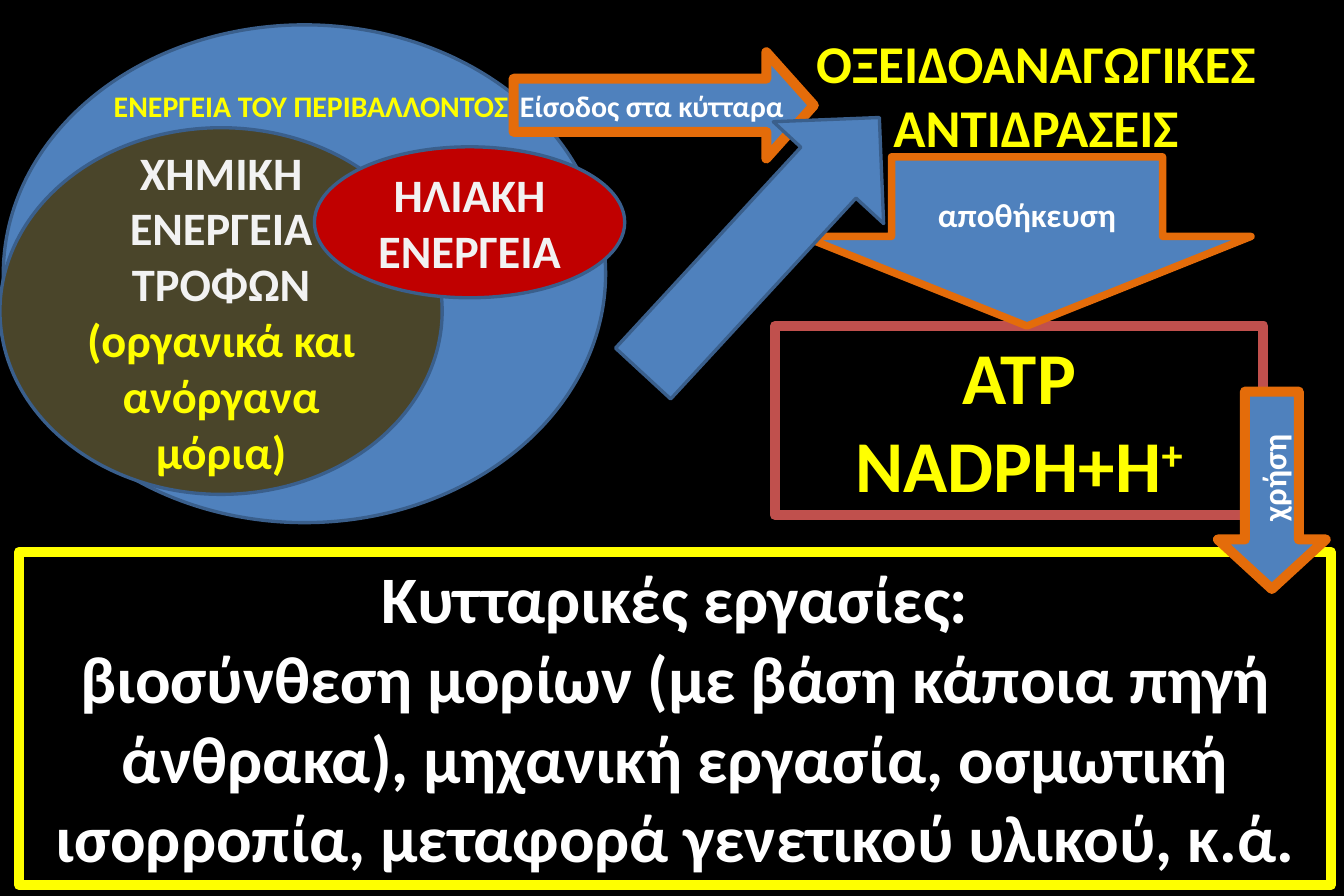
"""Build the slide on how cells take in, store and use energy."""
from pptx import Presentation
from pptx.dml.color import RGBColor
from pptx.enum.shapes import MSO_SHAPE as Preset
from pptx.enum.text import MSO_ANCHOR as Anchor, MSO_AUTO_SIZE as AutoSize, PP_ALIGN as Align
from pptx.util import Pt

COLORS = {
    "black": "000000", "white": "FFFFFF", "pale": "F2F2F2", "yellow": "FFFF00",
    "blue": "4F81BD", "navy": "3A5F8C", "orange": "E46C0A", "rose": "C0504D",
    "olive": "4A452A", "red": "C00000",
}


def color(name):
    return RGBColor.from_string(COLORS[name])


def draw(preset, box, fill=None, line="navy", width=2, adjust=(), rotation=0):
    shape = slide.shapes.add_shape(preset, *map(Pt, box))
    shape.shadow.inherit = False
    if fill:
        shape.fill.solid()
        shape.fill.fore_color.rgb = color(fill)
    else:
        shape.fill.background()
    shape.line.color.rgb = color(line)
    shape.line.width = Pt(width)
    for index, value in enumerate(adjust):
        shape.adjustments[index] = value
    shape.rotation = rotation
    return shape


def write(shape, text, size, ink, anchor=Anchor.MIDDLE, wrap=True, grow=False):
    frame = shape.text_frame
    frame.word_wrap = wrap
    frame.vertical_anchor = anchor
    frame.auto_size = AutoSize.SHAPE_TO_FIT_TEXT if grow else AutoSize.NONE
    frame.text = text
    for paragraph in frame.paragraphs:
        paragraph.alignment = Align.CENTER
        font = paragraph.font
        font.name, font.size, font.bold = "Calibri", Pt(size), True
        for run in paragraph.runs:
            run.font.name, run.font.size, run.font.bold = "Calibri", Pt(size), True
            run.font.color.rgb = color(ink)
    return frame.paragraphs[-1]


def add_run(paragraph, text, size, ink):
    run = paragraph.add_run()
    run.text = text
    run.font.name, run.font.size, run.font.bold = "Calibri", Pt(size), True
    run.font.color.rgb = color(ink)
    return run


prs = Presentation()
prs.slide_width, prs.slide_height = Pt(810), Pt(540)
slide = prs.slides.add_slide(prs.slide_layouts[6])
slide.background.fill.solid()
slide.background.fill.fore_color.rgb = color("black")

draw(Preset.OVAL, (2, 15, 363, 300), "blue")

carriers = draw(Preset.RECTANGLE, (467, 196.5, 294.5, 114), line="rose", width=6)
nadph = write(carriers, "ATP\nNADΡH+Η", 44, "yellow", Anchor.TOP, grow=True)
charge = add_run(nadph, "+", 44, "yellow")
charge.font._element.set("baseline", "30000")

entry = draw(Preset.RIGHT_ARROW, (309.5, 31.5, 181, 64), "blue", "orange", 6, (0.5, 0.447))
write(entry, "Είσοδος στα κύτταρα", 18, "white", wrap=False)

cell_work = draw(Preset.RECTANGLE, (11.5, 332.5, 790.5, 201), line="yellow", width=6)
write(cell_work, "Κυτταρικές εργασίες:\nβιοσύνθεση μορίων (με βάση κάποια πηγή άνθρακα), "
      "μηχανική εργασία, οσμωτική ισορροπία, μεταφορά γενετικού υλικού, κ.ά.",
      40, "white", Anchor.TOP, grow=True)

storage = draw(Preset.DOWN_ARROW, (484, 94.5, 270, 102), "blue", "orange", 4.5, (0.605, 0.529))
write(storage, "αποθήκευση", 20, "white", wrap=False)

redox = slide.shapes.add_textbox(Pt(439), Pt(15), Pt(371), Pt(84))
write(redox, "ΟΞΕΙΔΟΑΝΑΓΩΓΙΚΕΣ ΑΝΤΙΔΡΑΣΕΙΣ", 32, "yellow", Anchor.TOP, grow=True)

use = draw(Preset.RIGHT_ARROW, (707, 263, 119, 65), "blue", "orange", 6, (0.5, 0.459), 90)
write(use, "χρήση", 20, "white", Anchor.BOTTOM, wrap=False)
use.text_frame._txBody.bodyPr.set("rot", "10800000")

food = draw(Preset.OVAL, (0, 77, 266.5, 221), "olive")
food_text = write(food, "ΧΗΜΙΚΗ ΕΝΕΡΓΕΙΑ ΤΡΟΦΩΝ ", 28, "pale")
add_run(food_text, "(οργανικά και ανόργανα μόρια)", 28, "yellow")

solar = draw(Preset.OVAL, (189.5, 88.5, 187, 91), "red")
write(solar, "ΗΛΙΑΚΗ ΕΝΕΡΓΕΙΑ", 28, "pale")

draw(Preset.UP_ARROW, (413.5, 43, 90.5, 210), "blue", rotation=42.7)

environment = slide.shapes.add_textbox(Pt(60), Pt(49), Pt(255), Pt(29))
write(environment, "ΕΝΕΡΓΕΙΑ ΤΟΥ ΠΕΡΙΒΑΛΛΟΝΤΟΣ", 18, "yellow", Anchor.TOP, wrap=False, grow=True)

prs.save("out.pptx")
